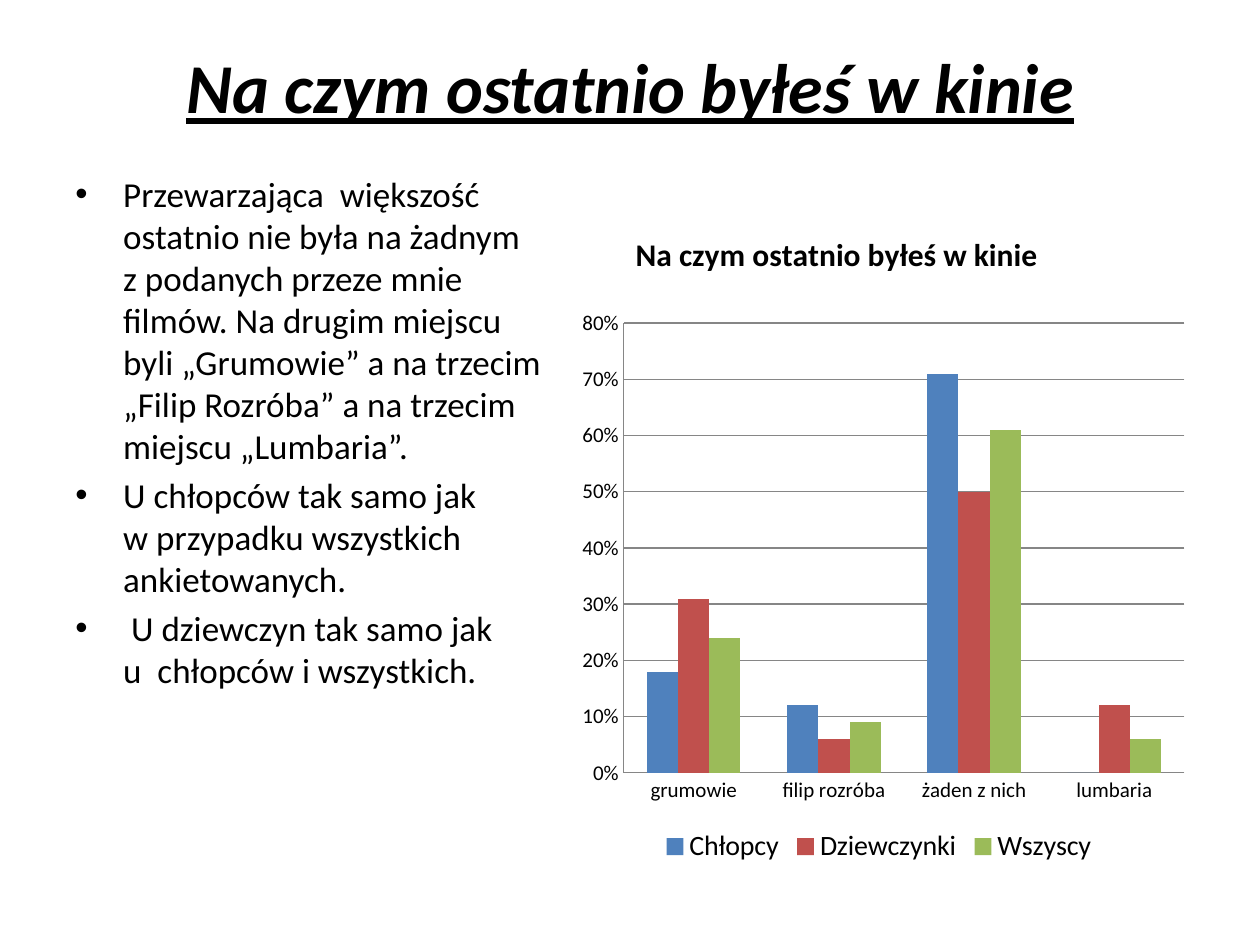
from lxml.etree import SubElement
from pptx import Presentation
from pptx.chart.data import CategoryChartData
from pptx.dml.color import RGBColor
from pptx.enum.chart import XL_CHART_TYPE, XL_LEGEND_POSITION, XL_TICK_MARK
from pptx.enum.text import MSO_ANCHOR, PP_ALIGN
from pptx.oxml import parse_xml
from pptx.oxml.ns import nsdecls, qn
from pptx.util import Inches, Pt

BLACK = RGBColor(0x00, 0x00, 0x00)
GRAY = RGBColor(0x86, 0x86, 0x86)
BLUE = RGBColor(0x4F, 0x81, 0xBD)
RED = RGBColor(0xC0, 0x50, 0x4D)
GREEN = RGBColor(0x9B, 0xBB, 0x59)

HEADING = "Na czym ostatnio byłeś w kinie"
FINDINGS = [
    ["Przewarzająca  większość ostatnio nie była na żadnym",
     "z podanych przeze mnie filmów. Na drugim miejscu byli „Grumowie” a na trzecim "
     "„Filip Rozróba” a na trzecim miejscu „Lumbaria”."],
    ["U chłopców tak samo jak", "w przypadku wszystkich ankietowanych."],
    [" U dziewczyn tak samo jak", "u  chłopców i wszystkich."],
]
FILMS = ["grumowie", "filip rozróba", "żaden z nich", "lumbaria"]
ANSWERS = [
    ("Chłopcy", BLUE, (0.18, 0.12, 0.71, 0)),
    ("Dziewczynki", RED, (0.31, 0.06, 0.5, 0.12)),
    ("Wszyscy ", GREEN, (0.24, 0.09, 0.61, 0.06)),
]


class Deck:
    font = "Calibri"
    width, height = Inches(10), Inches(7.5)

    def __init__(self):
        self.prs = Presentation()
        self.prs.slide_width, self.prs.slide_height = self.width, self.height
        self.s = self.prs.slides.add_slide(self.prs.slide_layouts[6])

    def box(self, x, y, w, h):
        return (int(x * self.width), int(y * self.height),
                int(w * self.width), int(h * self.height))

    def style(self, font, size, bold=False):
        font.name, font.size, font.bold = self.font, Pt(size), bold
        font.color.rgb = BLACK

    def text_frame(self, *area):
        tf = self.s.shapes.add_textbox(*self.box(*area)).text_frame
        tf.word_wrap = True
        tf.vertical_anchor = MSO_ANCHOR.TOP
        return tf

    def run(self, p, text, size, bold=False):
        r = p.add_run()
        r.text = text
        self.style(r.font, size, bold)
        return r

    def title(self, text, *area):
        p = self.text_frame(*area).paragraphs[0]
        p.alignment = PP_ALIGN.CENTER
        r = self.run(p, text, 40, True)
        r.font.italic = r.font.underline = True

    def bullets(self, items, *area):
        tf = self.text_frame(*area)
        tf.margin_top = Inches(0.09)
        for i, lines in enumerate(items):
            p = tf.add_paragraph() if i else tf.paragraphs[0]
            p.space_before = Pt(4)
            pPr = p._p.get_or_add_pPr()
            pPr.set("marL", str(Inches(0.38)))
            pPr.set("indent", str(-Inches(0.38)))
            SubElement(pPr, qn("a:buFont")).set("typeface", "Arial")
            SubElement(pPr, qn("a:buChar")).set("char", "•")
            for j, line in enumerate(lines):
                if j:
                    p.add_line_break()
                self.run(p, line, 20)

    def place(self, element, index, target="", **shares):
        for old in element.findall(qn("c:layout")):
            element.remove(old)
        values = "".join(f'<c:{k} val="{v}"/>' for k, v in shares.items())
        element.insert(index, parse_xml(
            f'<c:layout {nsdecls("c")}><c:manualLayout>{target}'
            f'<c:xMode val="edge"/><c:yMode val="edge"/>{values}'
            '</c:manualLayout></c:layout>'))

    def line(self, line):
        line.color.rgb, line.width = GRAY, Pt(0.75)

    def axis(self, axis):
        self.style(axis.tick_labels.font, 12)
        axis.major_tick_mark = axis.minor_tick_mark = XL_TICK_MARK.NONE
        self.line(axis.format.line)

    def columns(self, title, cats, answers, *area):
        data = CategoryChartData(number_format="0%")
        data.categories = cats
        for name, _, values in answers:
            data.add_series(name, values)
        chart = self.s.shapes.add_chart(
            XL_CHART_TYPE.COLUMN_CLUSTERED, *self.box(*area), data).chart
        self.style(chart.font, 10)
        chart.has_title = True
        self.run(chart.chart_title.text_frame.paragraphs[0], title, 18, True)
        chart.chart_title.include_in_layout = False
        self.place(chart.chart_title._element, 1, x=0.1, y=0)
        self.place(chart._chartSpace.chart.plotArea, 0,
                   '<c:layoutTarget val="inner"/>', x=0.09, y=0.15, w=0.89, h=0.7)
        plot = chart.plots[0]
        plot.gap_width, plot.overlap, plot.vary_by_categories = 150, 0, False
        for series, (_, color, _) in zip(plot.series, answers):
            series.format.fill.solid()
            series.format.fill.fore_color.rgb = color
        self.axis(chart.category_axis)
        values = chart.value_axis
        self.axis(values)
        values.minimum_scale, values.maximum_scale, values.major_unit = 0, 0.8, 0.1
        values.tick_labels.number_format = "0%"
        values.tick_labels.number_format_is_linked = False
        values.has_major_gridlines = True
        self.line(values.major_gridlines.format.line)
        chart.has_legend = True
        chart.legend.position = XL_LEGEND_POSITION.BOTTOM
        chart.legend.include_in_layout = False
        self.style(chart.legend.font, 16)


def main():
    deck = Deck()
    deck.title(HEADING, 0.05, 0.04, 0.9, 0.19)
    deck.bullets(FINDINGS, 0.05, 0.17, 0.4, 0.77)
    deck.columns(HEADING, FILMS, ANSWERS, 0.45, 0.24, 0.5, 0.68)
    deck.prs.save("out.pptx")


if __name__ == "__main__":
    main()
